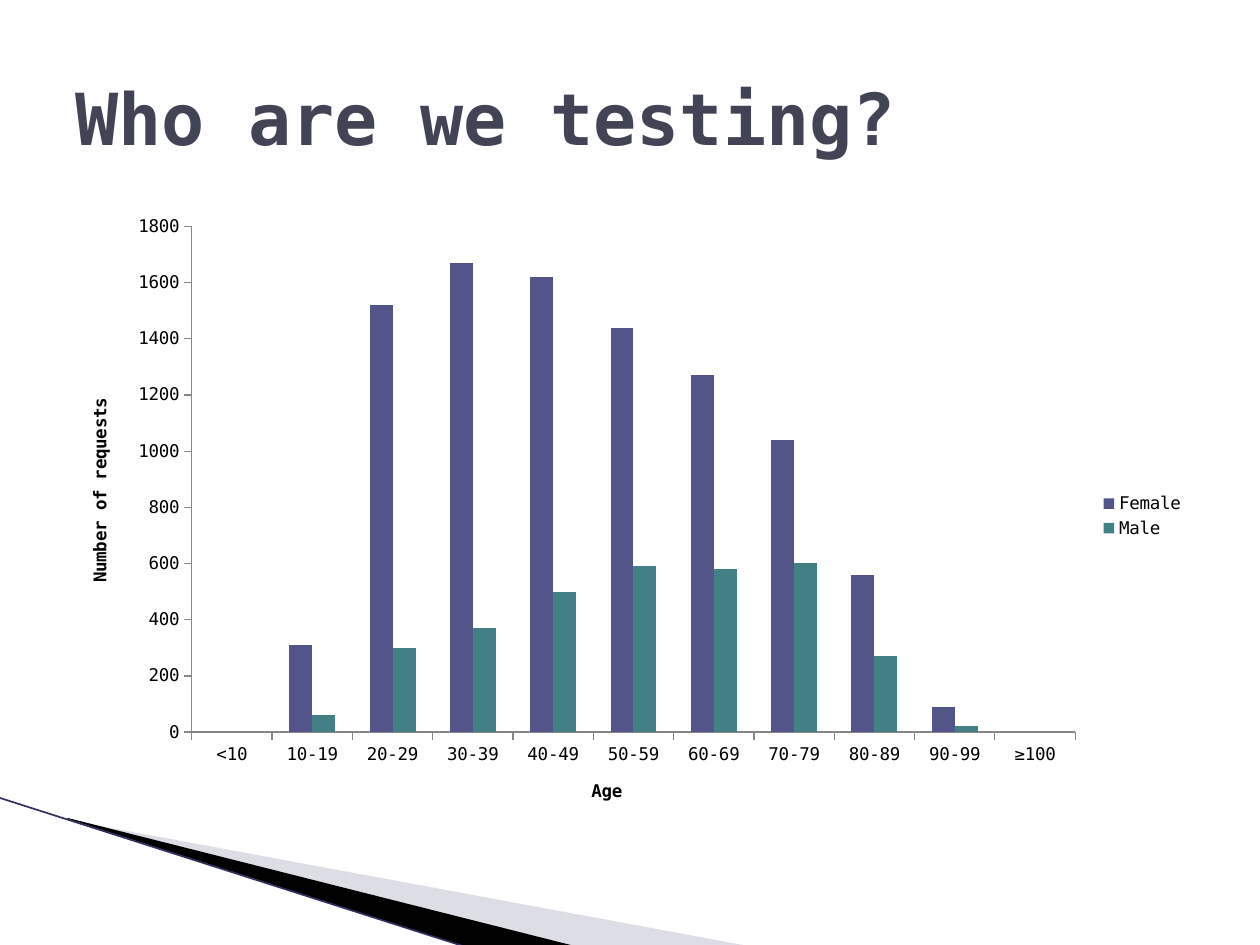
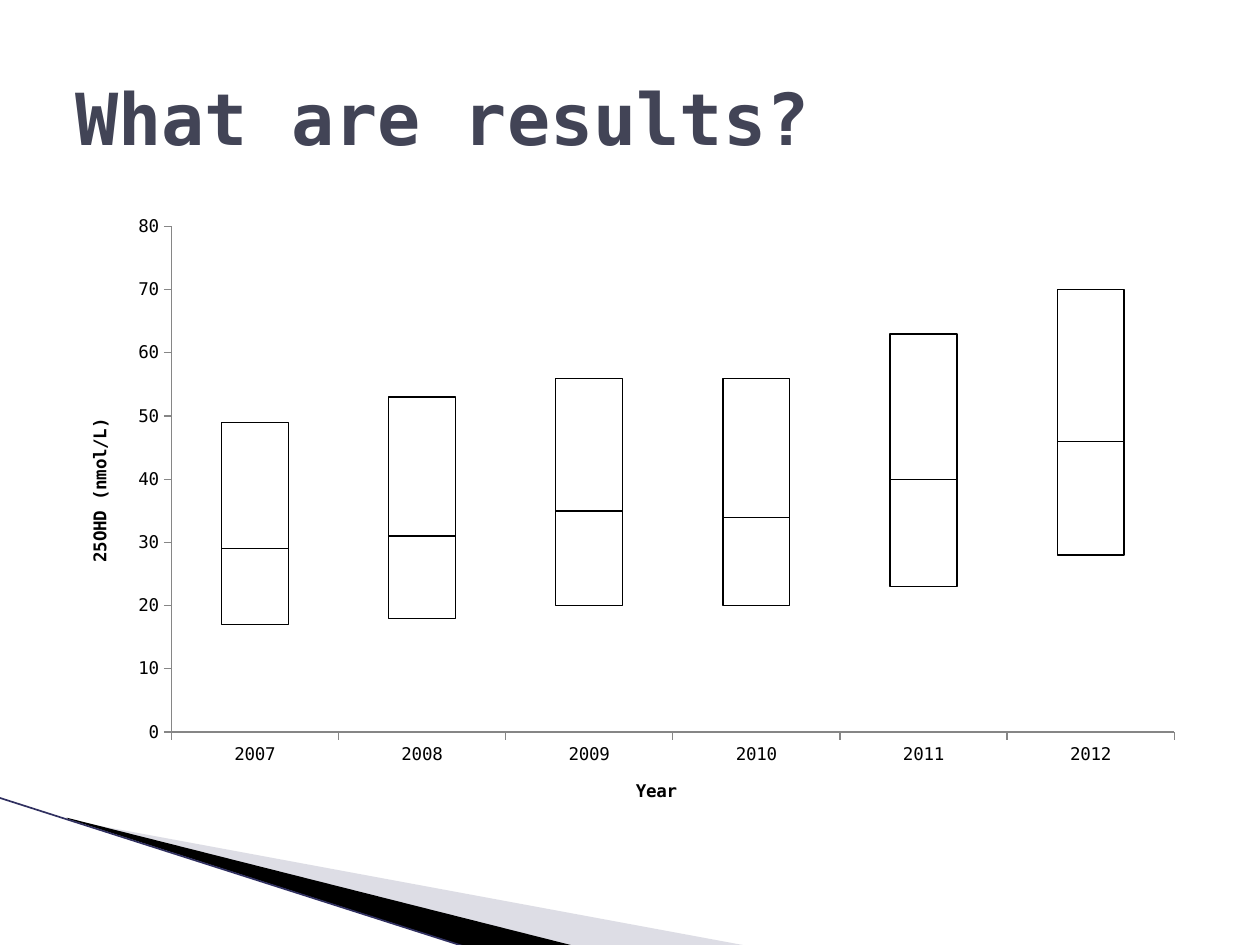
from lxml import etree
from pptx import Presentation
from pptx.chart.data import CategoryChartData
from pptx.dml.color import RGBColor
from pptx.enum import chart as ch, shapes, text
from pptx.oxml.ns import qn
from pptx.util import Inches, Pt

FONT = "DejaVu Sans Mono"
INK = RGBColor(0x42, 0x44, 0x56)
BLACK = RGBColor(0, 0, 0)
MIST = RGBColor(0xAA, 0xAA, 0xBF)
NAVY = RGBColor(0x30, 0x30, 0x60)
GRAY = RGBColor(0x86, 0x86, 0x86)
VIOLET = RGBColor(0x53, 0x54, 0x8A)
TEAL = RGBColor(0x43, 0x80, 0x86)

# Each series: name, fill, outline, values
SLIDES = [
    dict(title="Who are we testing?", kind=ch.XL_CHART_TYPE.COLUMN_CLUSTERED,
         axes=("Age", "Number of requests"), top=1800, step=200, legend=True,
         cats=["<10", "10-19", "20-29", "30-39", "40-49", "50-59",
               "60-69", "70-79", "80-89", "90-99", "≥100"],
         series=[
             ("Female", VIOLET, None,
              [0, 310, 1520, 1670, 1620, 1440, 1270, 1040, 560, 90, 0]),
             ("Male", TEAL, None,
              [0, 60, 300, 370, 500, 590, 580, 600, 270, 20, 0])]),
    dict(title="What are results?", kind=ch.XL_CHART_TYPE.COLUMN_STACKED,
         axes=("Year", "25OHD (nmol/L)"), top=80, step=10, legend=False,
         cats=["2007", "2008", "2009", "2010", "2011", "2012"],
         series=[
             ("Series 1", None, None, [17, 18, 20, 20, 23, 28]),
             ("Series 2", None, BLACK, [12, 13, 15, 14, 17, 18]),
             ("Series 3", None, BLACK, [20, 22, 21, 22, 23, 24])]),
]

# Corner wedges: colour, opacity in percent, frame, corners
WEDGES = [
    (MIST, 40, (0.78, 5.47, 4.16, 1.58),
     [(0.55, 6.51), (5.95, 7.51), (4.56, 7.51), (0.55, 6.5)]),
    (BLACK, 100, (-0.06, 6.33, 4.16, 0.92),
     [(0.53, 6.49), (4.57, 7.51), (3.72, 7.52), (0.54, 6.5)]),
]
EDGE = (-0.01, 6.33, 3.71, 7.52)


def paint(fill, color):
    if color is None:
        fill.background()
    else:
        fill.solid()
        fill.fore_color.rgb = color


def style(font, size, color, bold=False):
    font.name, font.size, font.bold = FONT, Pt(size), bold
    font.color.rgb = color


def reframe(shape, frame):
    """Give a freeform a new frame while its corners stay in place."""
    left, top, width, height = map(Inches, frame)
    right, down = shape.left - left, shape.top - top
    shape.left, shape.top, shape.width, shape.height = left, top, width, height
    track = next(shape._element.iter(qn("a:path")))
    track.set("w", str(width))
    track.set("h", str(height))
    for spot in track.iter(qn("a:pt")):
        spot.set("x", str(int(spot.get("x")) + right))
        spot.set("y", str(int(spot.get("y")) + down))


def add_corner(slide):
    for color, alpha, frame, points in WEDGES:
        spots = [(Inches(x), Inches(y)) for x, y in points]
        pen = slide.shapes.build_freeform(*spots[0])
        pen.add_line_segments(spots[1:])
        wedge = pen.convert_to_shape()
        reframe(wedge, frame)
        wedge.shadow.inherit = False
        paint(wedge.fill, color)
        wedge.line.fill.background()
        if alpha < 100:
            tint = wedge.fill._xPr.find(".//" + qn("a:srgbClr"))
            etree.SubElement(tint, qn("a:alpha"), val=str(alpha * 1000))
    edge = slide.shapes.add_connector(shapes.MSO_CONNECTOR.STRAIGHT,
                                      *map(Inches, EDGE))
    edge.line.color.rgb = NAVY
    edge.line.width = Pt(0.95)
    etree.SubElement(edge._element.spPr, qn("a:effectLst"))


def add_title(slide, words):
    box = slide.shapes.add_textbox(Inches(0.5), Inches(0.3), Inches(9), Inches(1.25))
    frame = box.text_frame
    frame.word_wrap = True
    frame.vertical_anchor = text.MSO_ANCHOR.MIDDLE
    para = frame.paragraphs[0]
    para.text = words
    style(para.font, 41, INK, True)


def dress_axis(axis, name):
    axis.has_major_gridlines = False
    axis.major_tick_mark = ch.XL_TICK_MARK.OUTSIDE
    axis.minor_tick_mark = ch.XL_TICK_MARK.NONE
    axis.format.line.color.rgb = GRAY
    axis.format.line.width = Pt(0.75)
    style(axis.tick_labels.font, 10, BLACK)
    para = axis.axis_title.text_frame.paragraphs[0]
    para.text = name
    style(para.font, 10, BLACK, True)


def add_graph(slide, part):
    data = CategoryChartData()
    data.categories = part["cats"]
    for name, _, _, values in part["series"]:
        data.add_series(name, values)
    graph = slide.shapes.add_chart(part["kind"], Inches(0.5), Inches(1.62),
                                   Inches(9), Inches(4.95), data).chart
    style(graph.font, 10, BLACK)
    graph.has_title = False
    graph.has_legend = part["legend"]
    if part["legend"]:
        graph.legend.position = ch.XL_LEGEND_POSITION.RIGHT
        graph.legend.include_in_layout = False
        style(graph.legend.font, 10, BLACK)
    for axis, name in zip((graph.category_axis, graph.value_axis), part["axes"]):
        dress_axis(axis, name)
    graph.value_axis.minimum_scale = 0
    graph.value_axis.maximum_scale = part["top"]
    graph.value_axis.major_unit = part["step"]
    plot = graph.plots[0]
    plot.gap_width = 150
    plot.vary_by_categories = False
    for bars, (_, fill, line, _) in zip(plot.series, part["series"]):
        paint(bars.format.fill, fill)
        paint(bars.format.line.fill, line)
        if line is not None:
            bars.format.line.width = Pt(0.75)


def main():
    deck = Presentation()
    deck.slide_width, deck.slide_height = Inches(10), Inches(7.5)
    for part in SLIDES:
        slide = deck.slides.add_slide(deck.slide_layouts[6])
        add_corner(slide)
        add_title(slide, part["title"])
        add_graph(slide, part)
    deck.save("out.pptx")


if __name__ == "__main__":
    main()
